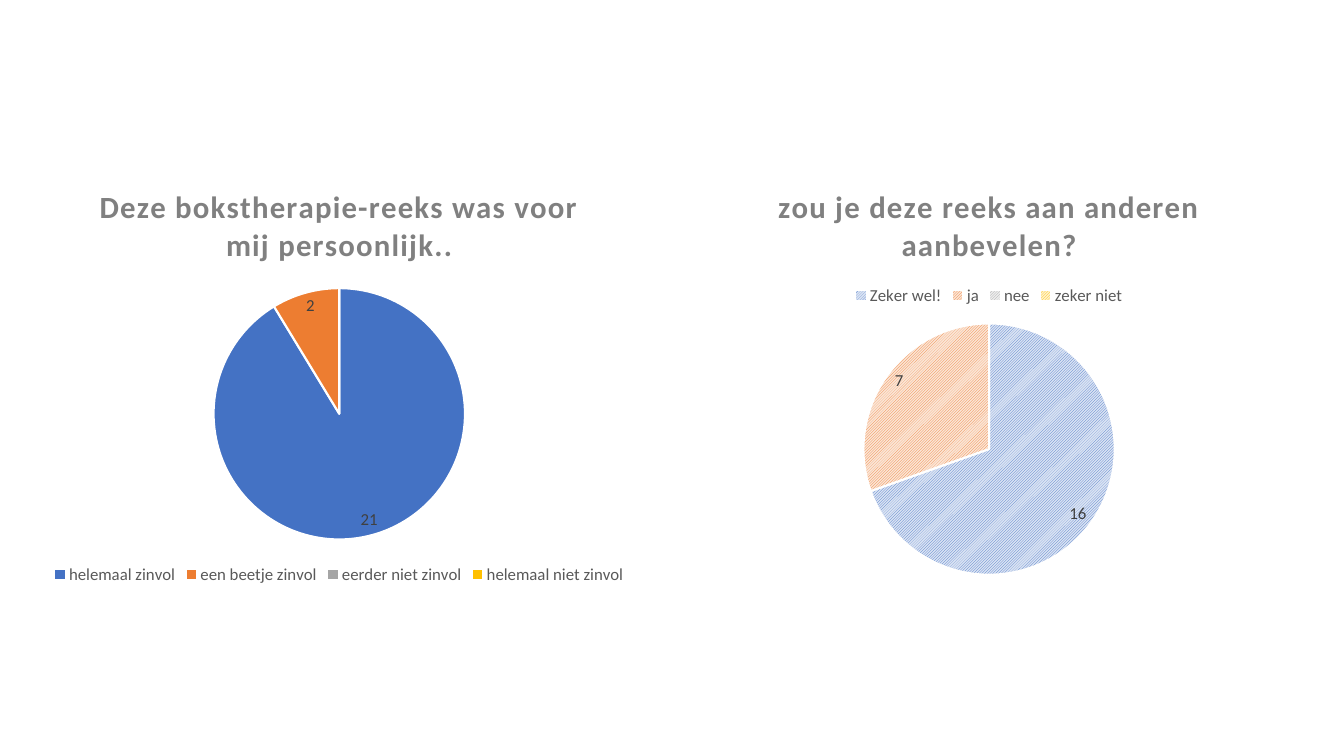
from dataclasses import dataclass

from pptx import Presentation
from pptx.chart.data import CategoryChartData
from pptx.dml.color import RGBColor
from pptx.enum.chart import XL_CHART_TYPE as ChartType
from pptx.enum.chart import XL_LABEL_POSITION as LabelPosition
from pptx.enum.chart import XL_LEGEND_POSITION as LegendPosition
from pptx.enum.dml import MSO_PATTERN as Pattern
from pptx.util import Inches, Pt


@dataclass(frozen=True)
class Theme:
    font: str = "Calibri"
    title_size: int = 22
    text_size: int = 12
    base_size: int = 10
    title_spacing: int = 100
    border_width: float = 1.5
    title: str = "808080"
    legend: str = "595959"
    label: str = "404040"
    base: str = "000000"
    border: str = "FFFFFF"
    slices: tuple = ("4472C4", "ED7D31", "A5A5A5", "FFC000")
    tints: tuple = ("DAE3F3", "FBE5D6", "EDEDED", "FFF2CC")


THEME = Theme()


def color(value):
    return RGBColor.from_string(value)


def style_font(font, size, value, bold=False):
    font.name = THEME.font
    font.size = Pt(size)
    font.bold = bold
    font.color.rgb = color(value)


def set_title(chart, question):
    chart.has_title = True
    chart.chart_title.include_in_layout = False
    paragraph = chart.chart_title.text_frame.paragraphs[0]
    run = paragraph.add_run()
    run.text = question
    style_font(run.font, THEME.title_size, THEME.title, bold=True)
    run._r.get_or_add_rPr().set("spc", str(THEME.title_spacing))


def set_legend(chart, position):
    chart.has_legend = True
    chart.legend.position = position
    chart.legend.include_in_layout = False
    style_font(chart.legend.font, THEME.text_size, THEME.legend)


def set_labels(plot):
    plot.has_data_labels = True
    labels = plot.data_labels
    labels.show_value = True
    labels.show_percentage = False
    labels.position = LabelPosition.BEST_FIT
    style_font(labels.font, THEME.text_size, THEME.label)


def color_slices(series, hatched):
    for index, (strong, tint) in enumerate(zip(THEME.slices, THEME.tints)):
        slice_format = series.points[index].format
        fill = slice_format.fill
        if hatched:
            fill.patterned()
            fill.pattern = Pattern.LIGHT_UPWARD_DIAGONAL
            fill.back_color.rgb = color(tint)
        else:
            fill.solid()
        fill.fore_color.rgb = color(strong)
        slice_format.line.color.rgb = color(THEME.border)
        slice_format.line.width = Pt(THEME.border_width)


def add_survey_pie(slide, left, width, question, answers, legend_position, hatched=False):
    data = CategoryChartData()
    data.categories = list(answers)
    data.add_series(question, list(answers.values()))
    chart = slide.shapes.add_chart(
        ChartType.PIE, Inches(left), Inches(1.65), Inches(width), Inches(4.19), data
    ).chart
    style_font(chart.font, THEME.base_size, THEME.base)
    set_title(chart, question)
    set_legend(chart, legend_position)
    plot = chart.plots[0]
    plot.vary_by_categories = True
    set_labels(plot)
    color_slices(plot.series[0], hatched)


def main():
    presentation = Presentation()
    presentation.slide_width = Inches(13.33)
    presentation.slide_height = Inches(7.5)
    slide = presentation.slides.add_slide(presentation.slide_layouts.get_by_name("Blank"))

    add_survey_pie(
        slide, 0.07, 6.59,
        "Deze bokstherapie-reeks was voor mij persoonlijk..",
        {
            "helemaal zinvol": 21,
            "een beetje zinvol": 2,
            "eerder niet zinvol": None,
            "helemaal niet zinvol": None,
        },
        LegendPosition.BOTTOM,
    )
    add_survey_pie(
        slide, 6.74, 6.14,
        "zou je deze reeks aan anderen aanbevelen?",
        {"Zeker wel!": 16, "ja": 7, "nee": None, "zeker niet": None},
        LegendPosition.TOP,
        hatched=True,
    )
    presentation.save("out.pptx")


if __name__ == "__main__":
    main()
